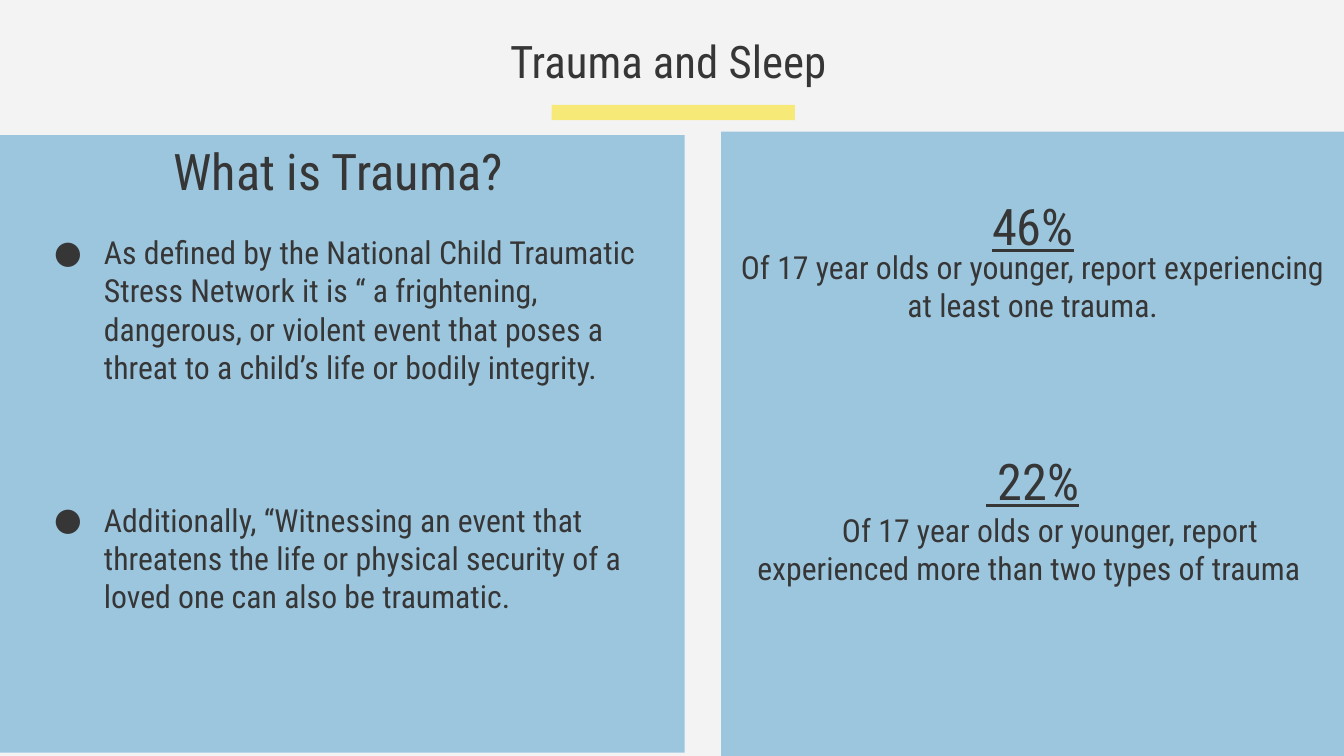
from lxml import etree
from pptx import Presentation
from pptx.dml.color import RGBColor
from pptx.enum.shapes import MSO_SHAPE
from pptx.enum.text import MSO_ANCHOR, MSO_AUTO_SIZE, PP_ALIGN
from pptx.oxml.ns import qn
from pptx.util import Inches, Pt

RECTANGLE = MSO_SHAPE.RECTANGLE
TOP, BOTTOM = MSO_ANCHOR.TOP, MSO_ANCHOR.BOTTOM
LEFT, CENTER, RIGHT = PP_ALIGN.LEFT, PP_ALIGN.CENTER, PP_ALIGN.RIGHT

BACKGROUND = RGBColor(0xF3, 0xF3, 0xF3)
BLUE = RGBColor(0x9C, 0xC6, 0xDE)
YELLOW = RGBColor(0xF6, 0xE9, 0x77)
INK = RGBColor(0x36, 0x36, 0x36)

COLUMNS, ROWS = 100, 56.25
CELL = Inches(0.1)
BODY_FONT = {"name": "Roboto Condensed", "size": Pt(17)}
TITLE_FONT = BODY_FONT | {"size": Pt(24)}
HEADING_FONT = BODY_FONT | {"size": Pt(27)}
FIGURE_FONT = HEADING_FONT | {"underline": True}


def set_attributes(target, values):
    for name, value in values.items():
        setattr(target, name, value)


def place(box, column, row, columns, rows):
    lengths = (box[0] + column, box[1] + row, columns, rows)
    return [round(length * CELL) for length in lengths]


def add_panel(slide, box, color):
    panel = slide.shapes.add_shape(RECTANGLE, *place(box, 0, 0, *box[2:]))
    panel.shadow.inherit = False
    panel.fill.solid()
    panel.fill.fore_color.rgb = color
    panel.line.fill.background()


def format_frame(shape, anchor):
    frame = shape.text_frame
    margins = ("margin_left", "margin_top", "margin_right", "margin_bottom")
    set_attributes(frame, dict.fromkeys(margins, CELL))
    set_attributes(frame, {"word_wrap": True, "auto_size": MSO_AUTO_SIZE.NONE,
                           "vertical_anchor": anchor})
    return frame


def write(paragraph, text, font, alignment):
    paragraph.alignment = alignment
    run = paragraph.add_run()
    run.text = text
    set_attributes(run.font, font)
    run.font.color.rgb = INK


def add_text(slide, position, lines, alignment, anchor=TOP):
    frame = format_frame(slide.shapes.add_textbox(*position), anchor)
    for index, (text, font) in enumerate(lines):
        paragraph = frame.add_paragraph() if index else frame.paragraphs[0]
        write(paragraph, text, font, alignment)
    return frame.paragraphs


def indent(paragraph, left, first_line, bullet=None):
    properties = paragraph._p.get_or_add_pPr()
    properties.set("marL", str(Inches(left)))
    properties.set("indent", str(Inches(first_line)))
    if bullet:
        font = etree.SubElement(properties, qn("a:buFont"))
        font.set("typeface", BODY_FONT["name"])
        etree.SubElement(properties, qn("a:buChar")).set("char", bullet)


def build_header(slide, box):
    title = slide.shapes.title
    names = ("left", "top", "width", "height")
    set_attributes(title, dict(zip(names, place(box, 3.5, 1.5, 93.2, 6.3))))
    paragraph = format_frame(title, TOP).paragraphs[0]
    write(paragraph, "Trauma and Sleep ", TITLE_FONT, CENTER)
    add_panel(slide, (box[0] + 41.05, box[1] + 7.8, 18.1, 1.15), YELLOW)


def build_definition(slide, box, heading, points):
    add_panel(slide, box, BLUE)
    add_text(slide, place(box, 6.65, 0.9, 32.6, 5), [(heading, HEADING_FONT)],
             RIGHT, BOTTOM)
    paragraphs = add_text(slide, place(box, 1.75, 6.3, 47.4, 38),
                          [(point, BODY_FONT) for point in points], LEFT)
    for paragraph in paragraphs:
        indent(paragraph, 0.5, -0.37, "●")
    paragraphs[-1].space_before = Pt(61.5)


def build_statistics(slide, box):
    add_panel(slide, box, BLUE)
    add_text(slide, place(box, 6.9, 3.9, 32.6, 6.3), [("46%", FIGURE_FONT)],
             CENTER, BOTTOM)
    add_text(slide, place(box, -0.5, 7.65, 47.4, 7.7),
             [("Of 17 year olds or younger, report experiencing "
               "at least one trauma.", BODY_FONT)], CENTER)
    lines = [(" 22%", FIGURE_FONT),
             ("Of 17 year olds or younger, report "
              "experienced more than two types of trauma ", BODY_FONT)]
    paragraphs = add_text(slide, place(box, 1.2, 22.7, 44, 12.2), lines, CENTER)
    indent(paragraphs[1], 0, 0.26)


def main():
    presentation = Presentation()
    presentation.slide_width = round(COLUMNS * CELL)
    presentation.slide_height = round(ROWS * CELL)
    slide = presentation.slides.add_slide(presentation.slide_layouts[5])
    slide.background.fill.solid()
    slide.background.fill.fore_color.rgb = BACKGROUND

    build_header(slide, (0, 0, COLUMNS, 9.8))
    build_definition(slide, (0, 10.05, 50.95, 45.95), "What is Trauma? ", [
        "As defined by the National Child Traumatic Stress Network it is "
        "“ a frightening, dangerous, or violent event that poses a threat "
        "to a child’s life or bodily integrity.",
        "Additionally, “Witnessing an event that threatens the life or "
        "physical security of a loved one can also be traumatic."])
    build_statistics(slide, (53.65, 9.8, COLUMNS - 53.65, ROWS - 9.8))
    presentation.save("out.pptx")


if __name__ == "__main__":
    main()
